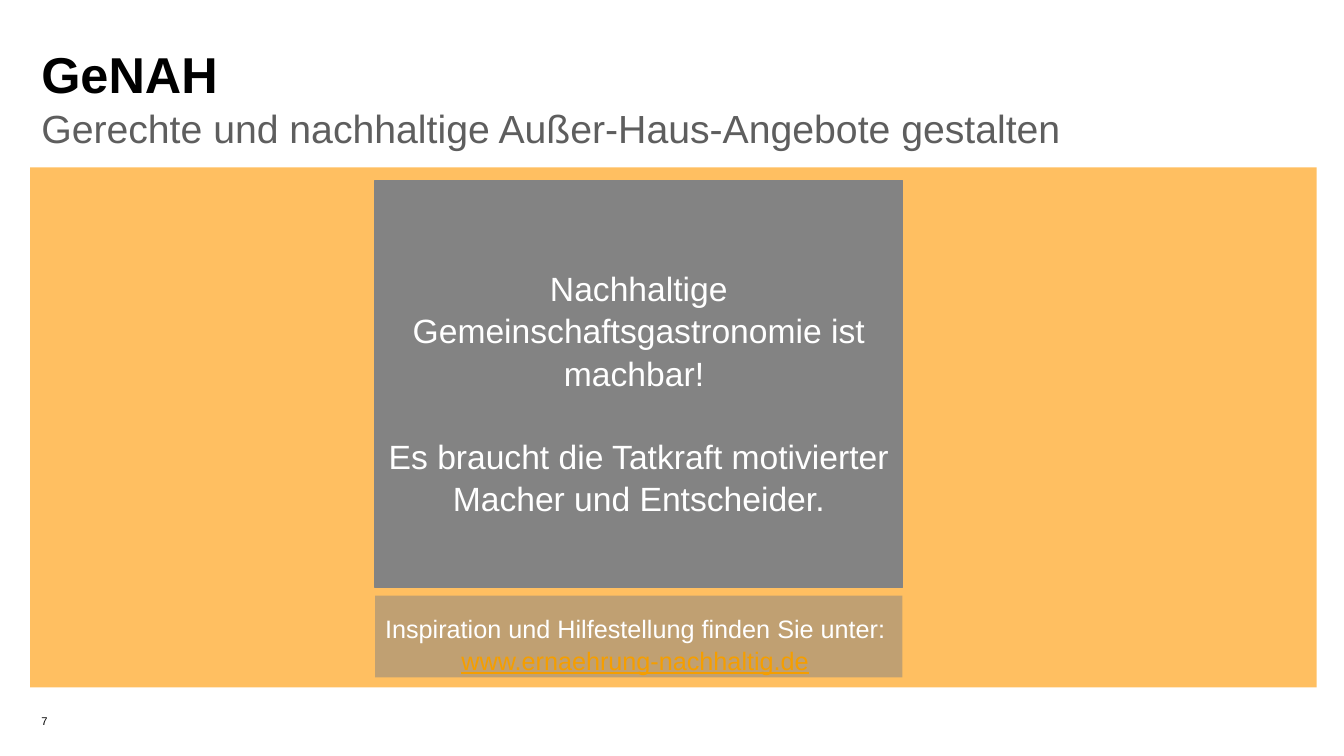
"""Build the closing GeNAH slide: a heading above a message panel."""
from lxml import etree
from pptx import Presentation
from pptx.dml.color import RGBColor
from pptx.enum.shapes import MSO_SHAPE
from pptx.enum.text import MSO_ANCHOR, PP_ALIGN
from pptx.oxml.ns import qn
from pptx.util import Inches, Pt

RECT = MSO_SHAPE.RECTANGLE
TOP, BOTTOM = MSO_ANCHOR.TOP, MSO_ANCHOR.BOTTOM
LEFT, CENTER = PP_ALIGN.LEFT, PP_ALIGN.CENTER

HEX = {"black": "000000", "dark": "5E5E5E", "gray": "838383",
       "sand": "FFBF61", "white": "FFFFFF", "link": "F59E00"}

WIDE, HIGH = 13.33, 7.5
EDGE = 0.41
CARD_X, CARD_W = 3.72, 5.23
TEXT_W = 5.55
TEXT_X = CARD_X + (CARD_W - TEXT_W) / 2

PANELS = [
    ((0.3, 1.66, 12.76, 5.16), "sand", None),
    ((CARD_X, 1.79, CARD_W, 4.04), "gray", None),
    ((CARD_X, 5.91, CARD_W, 0.81), "gray", 50),
]

HEADS = [
    ((EDGE, 0.41, 9.65, 0.62), "GeNAH", 36, "black", True, 1),
    ((EDGE, 0.95, 10.42, 0.55),
     "Gerechte und nachhaltige Außer-Haus-Angebote gestalten",
     28, "dark", False, 1.1),
    ((EDGE, 6.9, 1.57, 0.32), "7", 8, "black", False, 1),
]

NOTES = [
    ((TEXT_X, 2.59, TEXT_W, 2.52), 24, 29,
     ["Nachhaltige Gemeinschaftsgastronomie ist machbar! ",
      "Es braucht die Tatkraft motivierter Macher und Entscheider."]),
    ((TEXT_X, 6.02, TEXT_W, 0.71), 18, 0,
     ["Inspiration und Hilfestellung finden Sie unter: ",
      "www.ernaehrung-nachhaltig.de"]),
]


def tint(name):
    return RGBColor.from_string(HEX[name])


def panel(slide, box, name, alpha):
    shape = slide.shapes.add_shape(RECT, *map(Inches, box))
    shape.shadow.inherit = False
    shape.fill.solid()
    shape.fill.fore_color.rgb = tint(name)
    shape.line.fill.background()
    if alpha:
        color = shape.fill._xPr.find(".//" + qn("a:srgbClr"))
        etree.SubElement(color, qn("a:alpha")).set("val", str(alpha * 1000))
    return shape


def label(slide, box, lines, size, name, align, anchor, pad, space, gap=0):
    frame = slide.shapes.add_textbox(*map(Inches, box)).text_frame
    frame.word_wrap = True
    frame.vertical_anchor = anchor
    frame.margin_left = frame.margin_right = Inches(pad)
    frame.margin_top = frame.margin_bottom = Inches(pad / 2)
    frame.text = "\n".join(lines)
    for i, para in enumerate(frame.paragraphs):
        para.alignment = align
        para.line_spacing = space
        para.space_before = Pt(gap if i else 0)
        for run in para.runs:
            run.font.size = Pt(size)
            run.font.name = "Arial"
            run.font.color.rgb = tint(name)
    return frame


def main():
    deck = Presentation()
    deck.slide_width, deck.slide_height = Inches(WIDE), Inches(HIGH)
    slide = deck.slides.add_slide(deck.slide_layouts[6])

    shapes = [panel(slide, *item) for item in PANELS]
    card = shapes[1]
    card.line.color.rgb = tint("gray")
    card.line.width = Pt(1)

    for box, text, size, name, bold, space in HEADS:
        frame = label(slide, box, [text], size, name, LEFT, BOTTOM, 0, space)
        frame.paragraphs[0].runs[0].font.bold = bold

    for box, size, gap, lines in NOTES:
        frame = label(slide, box, lines, size, "white", CENTER, TOP,
                      0.1, 1.05, gap)

    last = frame.paragraphs[-1]
    site = last.runs[0].font
    site.color.rgb = tint("link")
    site.underline = True
    tail = last.add_run()
    tail.text = " "
    tail.font.size = Pt(18)
    tail.font.name = "Arial"

    deck.save("out.pptx")


if __name__ == "__main__":
    main()
